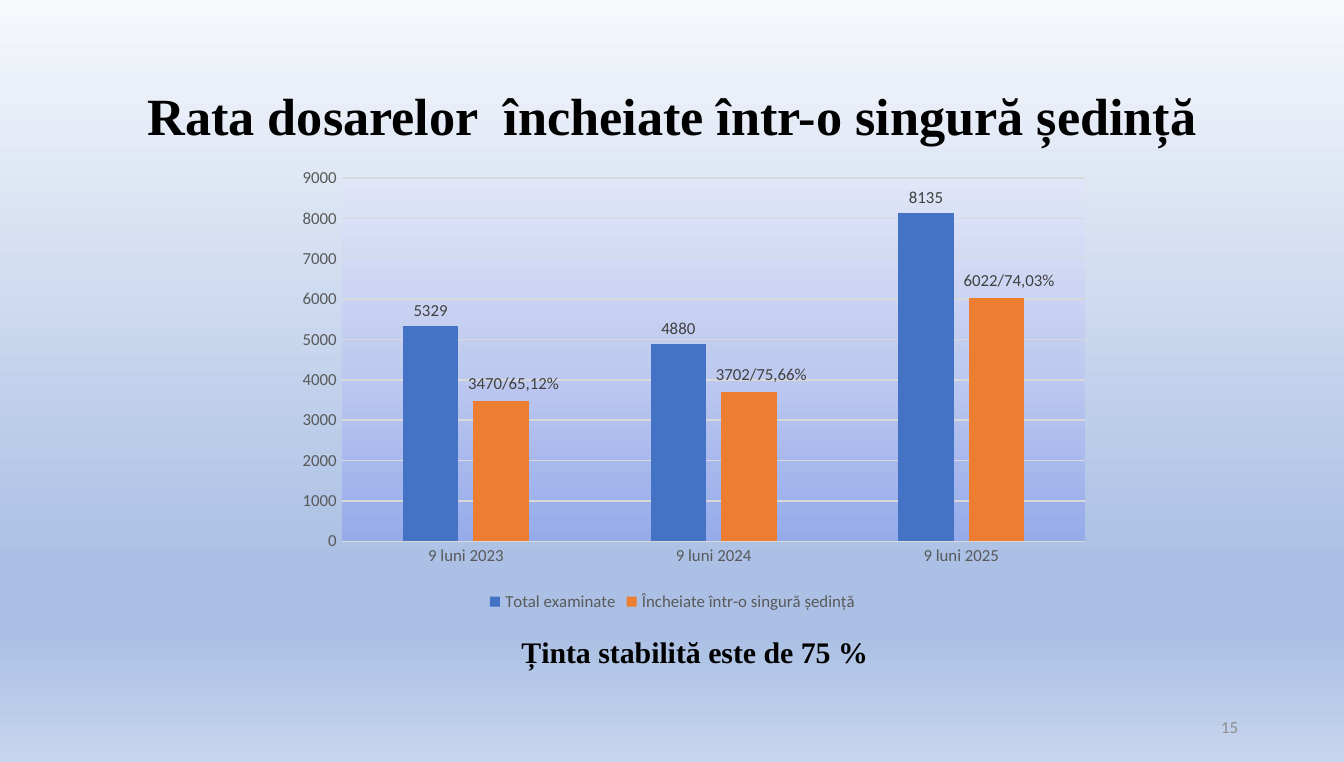
"""Build the slide on the rate of cases closed in a single hearing."""
from dataclasses import dataclass

import lxml.etree
import pptx
import pptx.chart.data
import pptx.dml.color
import pptx.enum.chart
import pptx.enum.text
import pptx.oxml
import pptx.oxml.ns
import pptx.util

Inches = pptx.util.Inches
Pt = pptx.util.Pt
qn = pptx.oxml.ns.qn
PP_ALIGN = pptx.enum.text.PP_ALIGN


@dataclass(frozen=True)
class Theme:
    """Hold the fonts, colours and type sizes."""
    serif: str = "Times New Roman"
    sans: str = "Calibri"
    ink: str = "000000"
    axis: str = "595959"
    label: str = "404040"
    grid: str = "D9D9D9"
    number: str = "8C8C8C"
    bars: tuple = ("4472C4", "ED7D31")
    background: tuple = ((0, "F6F8FC"), (74, "ABC0E4"), (83, "ABC0E4"), (100, "C7D5ED"))
    plot: tuple = ((0, "96ABEA"), (50, "C0CBF0"), (100, "E0E5F7"))
    title_pt: int = 28
    target_pt: int = 16
    small_pt: int = 9


THEME = Theme()


def rgb(color):
    """Turn a hex string into a colour."""
    return pptx.dml.color.RGBColor.from_string(color)


def set_font(font, name, size, color, bold=False):
    """Style a font."""
    font.name, font.size, font.bold = name, Pt(size), bold
    font.color.rgb = rgb(color)


def gradient(stops, angle):
    """Return a linear gradient fill element."""
    grad = lxml.etree.Element(qn("a:gradFill"), rotWithShape="1")
    gs_list = lxml.etree.SubElement(grad, qn("a:gsLst"))
    for pos, color in stops:
        gs = lxml.etree.SubElement(gs_list, qn("a:gs"), pos=str(pos * 1000))
        lxml.etree.SubElement(gs, qn("a:srgbClr"), val=color)
    lxml.etree.SubElement(grad, qn("a:lin"), ang=str(angle * 60000), scaled="0")
    return grad


def manual_layout(**values):
    """Return a chart layout element with the given settings."""
    layout = lxml.etree.Element(qn("c:layout"))
    manual = lxml.etree.SubElement(layout, qn("c:manualLayout"))
    for key, value in values.items():
        lxml.etree.SubElement(manual, qn(f"c:{key}"), val=str(value))
    return layout


def set_background(s):
    """Fill the slide background with the theme gradient."""
    s.background.fill.background()
    no_fill = s.element.xpath(".//p:bgPr/a:noFill")[0]
    no_fill.getparent().replace(no_fill, gradient(THEME.background, 90))


def add_text(s, box, text, align, font, wrap=True):
    """Add a one-line text box and return its frame."""
    sp = s.shapes.add_textbox(*map(Inches, box))
    tf = sp.text_frame
    tf.word_wrap = wrap
    tf.vertical_anchor = pptx.enum.text.MSO_ANCHOR.MIDDLE
    p = tf.paragraphs[0]
    p.alignment = align
    r = p.add_run()
    r.text = text
    set_font(r.font, *font)
    return tf


def style_axes(chart):
    """Style both axes and the gridlines."""
    for axis in (chart.category_axis, chart.value_axis):
        axis.major_tick_mark = axis.minor_tick_mark = pptx.enum.chart.XL_TICK_MARK.NONE
        set_font(axis.tick_labels.font, THEME.sans, THEME.small_pt, THEME.axis)
    chart.value_axis.maximum_scale = 9000
    chart.value_axis.minimum_scale = 0
    chart.value_axis.major_unit = 1000
    chart.value_axis.format.line.fill.background()
    for line in (chart.category_axis.format.line, chart.value_axis.major_gridlines.format.line):
        line.color.rgb = rgb(THEME.grid)
        line.width = Pt(0.75)


def style_plot_area(chart):
    """Place the plot area and give it a gradient."""
    area = chart.element.find(".//" + qn("c:plotArea"))
    for old in area.findall(qn("c:layout")):
        area.remove(old)
    area.insert(0, manual_layout(layoutTarget="inner", xMode="edge", yMode="edge",
                                 x=0.1, y=0.07, w=0.9, h=0.77))
    lxml.etree.SubElement(area, qn("c:spPr")).append(gradient(THEME.plot, 270))


def label_series(series, color, texts):
    """Colour a series and label its bars, with own texts where given."""
    series.format.fill.solid()
    series.format.fill.fore_color.rgb = rgb(color)
    labels = series.data_labels
    labels.show_value = True
    labels.position = pptx.enum.chart.XL_LABEL_POSITION.OUTSIDE_END
    set_font(labels.font, THEME.sans, THEME.small_pt, THEME.label)
    for i, text in enumerate(texts):
        label = series.points[i].data_label
        r = label.text_frame.paragraphs[0].add_run()
        r.text = text
        set_font(r.font, THEME.sans, THEME.small_pt, THEME.label)
        label.position = pptx.enum.chart.XL_LABEL_POSITION.OUTSIDE_END
    for idx in series._element.findall(".//" + qn("c:dLbl") + "/" + qn("c:idx")):
        idx.addnext(manual_layout(x=0.015, y=-0.005))


def add_chart(s, box, categories, series):
    """Add the clustered column chart."""
    data = pptx.chart.data.CategoryChartData()
    data.categories = categories
    for name, values, _ in series:
        data.add_series(name, values)
    kind = pptx.enum.chart.XL_CHART_TYPE.COLUMN_CLUSTERED
    chart = s.shapes.add_chart(kind, *map(Inches, box), data).chart
    set_font(chart.font, THEME.sans, 10, THEME.ink)
    chart.has_title = False
    chart.has_legend = True
    chart.legend.position = pptx.enum.chart.XL_LEGEND_POSITION.BOTTOM
    chart.legend.include_in_layout = False
    set_font(chart.legend.font, THEME.sans, THEME.small_pt, THEME.axis)
    plot = chart.plots[0]
    plot.gap_width, plot.overlap = 219, -27
    plot.vary_by_categories = False
    style_axes(chart)
    style_plot_area(chart)
    for ser, color, (_, _, texts) in zip(plot.series, THEME.bars, series):
        label_series(ser, color, texts)


def add_target(s, box, text):
    """Add the indented line that states the target."""
    font = (THEME.serif, THEME.target_pt, THEME.ink, True)
    tf = add_text(s, box, text, PP_ALIGN.CENTER, font, wrap=False)
    tf.vertical_anchor = pptx.enum.text.MSO_ANCHOR.TOP
    tf.auto_size = pptx.enum.text.MSO_AUTO_SIZE.SHAPE_TO_FIT_TEXT
    p = tf.paragraphs[0]
    p.line_spacing, p.space_after = 1.07, Pt(8)
    p._p.get_or_add_pPr().set("marL", str(Inches(0.2)))


def main():
    """Build and save the slide."""
    prs = pptx.Presentation()
    prs.slide_width, prs.slide_height = Inches(10), Inches(5.67)
    s = prs.slides.add_slide(prs.slide_layouts[6])
    set_background(s)
    add_text(s, (0.5, 0.33, 9, 1.04), "Rata dosarelor  încheiate într-o singură ședință",
             PP_ALIGN.CENTER, (THEME.serif, THEME.title_pt, THEME.ink, True))
    add_text(s, (7.06, 5.26, 2.25, 0.3), "15", PP_ALIGN.RIGHT,
             (THEME.sans, THEME.small_pt, THEME.number))
    add_chart(s, (1.93, 1.08, 6.15, 3.51), [f"9 luni {year}" for year in (2023, 2024, 2025)], [
        ("Total examinate", (5329, 4880, 8135), ()),
        ("Încheiate într-o singură ședință", (3470, 3702, 6022),
         ("3470/65,12%", "3702/75,66%", "6022/74,03%")),
    ])
    add_target(s, (3.56, 4.65, 3.02, 0.37), "Ținta stabilită este de 75 %")
    prs.save("out.pptx")


if __name__ == "__main__":
    main()
